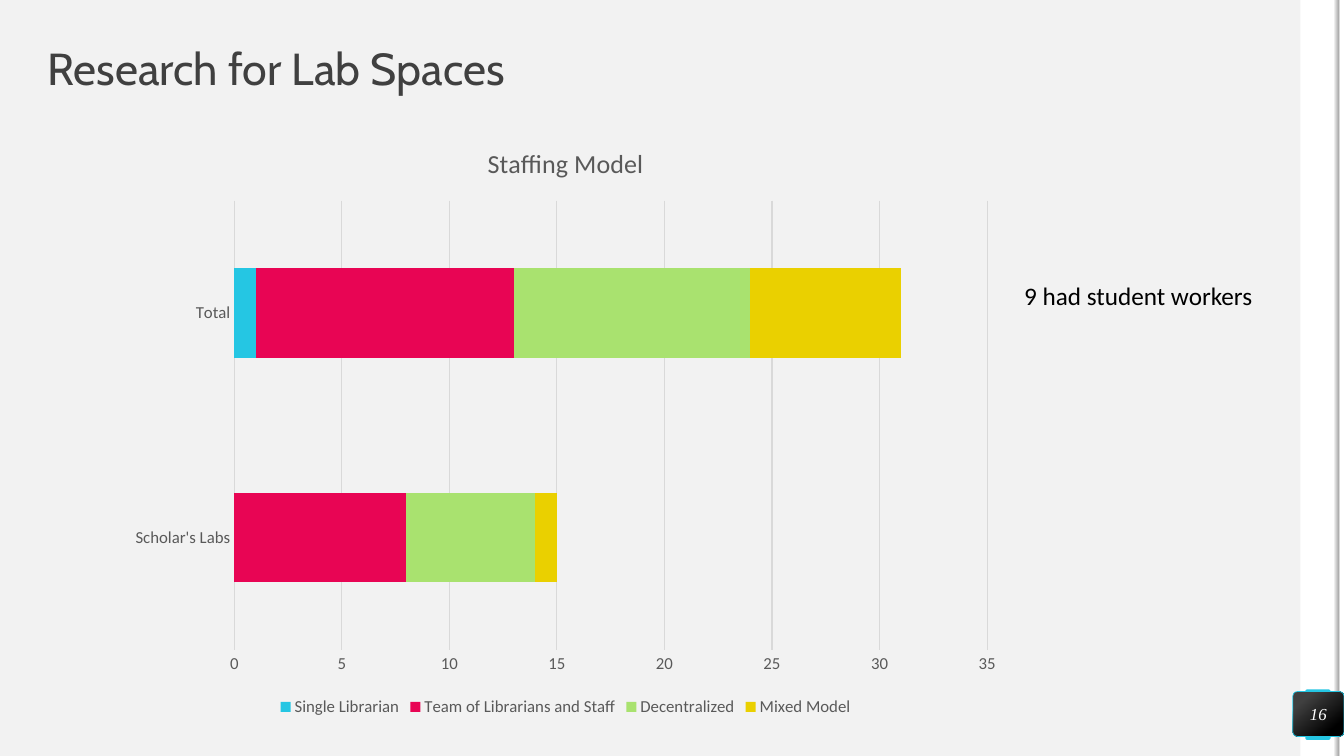
"""Build the staffing model slide with its stacked bar chart."""
from pptx import Presentation
from pptx.chart.data import CategoryChartData
from pptx.dml.color import RGBColor
from pptx.enum.chart import XL_CHART_TYPE, XL_LEGEND_POSITION, XL_TICK_MARK
from pptx.enum.shapes import MSO_SHAPE
from pptx.enum.text import MSO_ANCHOR, PP_ALIGN
from pptx.util import Pt

SERIES = [
    ("Single Librarian", (0, 1), "25C6E3"),
    ("Team of Librarians and Staff", (8, 12), "E80554"),
    ("Decentralized", (6, 11), "A9E26F"),
    ("Mixed Model", (1, 7), "EAD000"),
]


def colour(code):
    return RGBColor.from_string(code)


def style_font(font, size, code, name="Calibri", italic=False):
    font.size = Pt(size)
    font.name = name
    font.bold = False
    font.italic = italic
    font.color.rgb = colour(code)


def style_line(line, code):
    line.color.rgb = colour(code)
    line.width = Pt(0.75)


def clear_margins(frame):
    frame.margin_left = frame.margin_right = 0
    frame.margin_top = frame.margin_bottom = 0
    frame.vertical_anchor = MSO_ANCHOR.MIDDLE


def add_block(page, left, top, width, height, code=None, rounding=None):
    kind = MSO_SHAPE.RECTANGLE if rounding is None else MSO_SHAPE.ROUNDED_RECTANGLE
    block = page.shapes.add_shape(kind, Pt(left), Pt(top), Pt(width), Pt(height))
    if rounding is not None:
        block.adjustments[0] = rounding
    block.shadow.inherit = False
    block.line.fill.background()
    if code:
        block.fill.solid()
        block.fill.fore_color.rgb = colour(code)
    return block


def fill_gradient(block, angle, stops):
    block.fill.gradient()
    block.fill.gradient_angle = angle
    for stop, (position, code) in zip(block.fill.gradient_stops, stops):
        stop.position = position
        stop.color.rgb = colour(code)


def add_side_strip(page):
    add_block(page, 928.8, 0, 28, 540, "FFFFFF")
    add_block(page, 932.4, 492.5, 18, 36, "25C6E3", 0.07)
    add_block(page, 956.5, 0, 3.5, 540, "FFFFFF")
    edge = add_block(page, 953, 0, 3.5, 540)
    fill_gradient(edge, 0, [(0, "F2F2F2"), (1, "A6A6A6")])


def add_page_badge(page, number):
    badge = add_block(page, 923.5, 494, 36.5, 32, rounding=0.1)
    fill_gradient(badge, 310, [(0.2, "404040"), (0.82, "000000")])
    badge.line.color.rgb = colour("25C6E3")
    badge.line.width = Pt(0.5)
    clear_margins(badge.text_frame)
    badge.text_frame.text = number
    para = badge.text_frame.paragraphs[0]
    para.alignment = PP_ALIGN.CENTER
    style_font(para.runs[0].font, 12, "FFFFFF", "Times New Roman", True)


def set_title(page, text):
    title = page.shapes.title
    title.left, title.top, title.width, title.height = Pt(34), Pt(34), Pt(892), Pt(34)
    clear_margins(title.text_frame)
    title.text_frame.text = text
    para = title.text_frame.paragraphs[0]
    para.alignment = PP_ALIGN.LEFT
    para.line_spacing = 0.9
    style_font(para.runs[0].font, 32, "404040", "Cabin")


def add_note(page, text):
    box = page.shapes.add_textbox(Pt(724.5), Pt(196.5), Pt(182), Pt(29))
    box.text_frame.word_wrap = True
    box.text_frame.text = text
    style_font(box.text_frame.paragraphs[0].runs[0].font, 18, "000000")


def style_axis(axis):
    axis.major_tick_mark = axis.minor_tick_mark = XL_TICK_MARK.NONE
    style_font(axis.tick_labels.font, 12, "595959")


def add_staffing_chart(page):
    data = CategoryChartData()
    data.categories = ["Scholar's Labs", "Total"]
    for name, values, _ in SERIES:
        data.add_series(name, values)
    chart = page.shapes.add_chart(
        XL_CHART_TYPE.BAR_STACKED, Pt(84), Pt(88), Pt(640), Pt(427), data
    ).chart
    style_font(chart.font, 10, "000000")

    chart.has_title = True
    heading = chart.chart_title.text_frame
    heading.text = "Staffing Model"
    style_font(heading.paragraphs[0].runs[0].font, 18.6, "595959")

    chart.has_legend = True
    chart.legend.position = XL_LEGEND_POSITION.BOTTOM
    chart.legend.include_in_layout = False
    style_font(chart.legend.font, 12, "595959")

    style_axis(chart.category_axis)
    style_line(chart.category_axis.format.line, "D9D9D9")
    scale = chart.value_axis
    style_axis(scale)
    scale.minimum_scale, scale.maximum_scale, scale.major_unit = 0, 35, 5
    scale.format.line.fill.background()
    style_line(scale.major_gridlines.format.line, "D9D9D9")

    plot = chart.plots[0]
    plot.gap_width, plot.overlap = 150, 100
    plot.vary_by_categories = False
    for series, (_, _, code) in zip(plot.series, SERIES):
        series.invert_if_negative = False
        series.format.fill.solid()
        series.format.fill.fore_color.rgb = colour(code)


def main():
    deck = Presentation()
    deck.slide_width, deck.slide_height = Pt(960), Pt(540)
    page = deck.slides.add_slide(deck.slide_layouts.get_by_name("Title Only"))
    page.background.fill.solid()
    page.background.fill.fore_color.rgb = colour("F2F2F2")
    add_side_strip(page)
    set_title(page, "Research for Lab Spaces")
    add_page_badge(page, "16")
    add_staffing_chart(page)
    add_note(page, "9 had student workers")
    deck.save("out.pptx")


if __name__ == "__main__":
    main()
